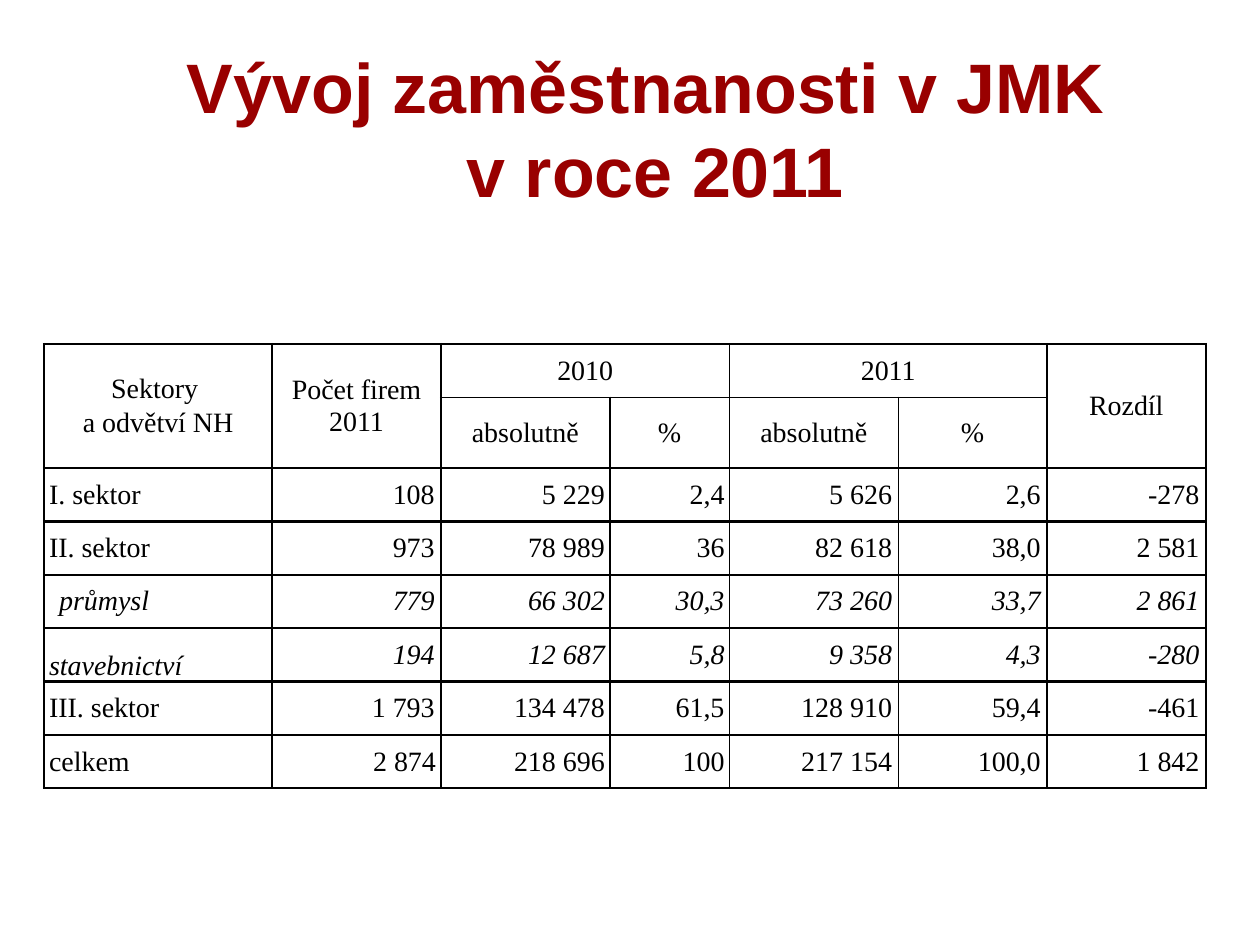
from dataclasses import dataclass

from lxml import etree
from pptx import Presentation
from pptx import util as u
from pptx.dml.color import RGBColor
from pptx.enum import text
from pptx.oxml.ns import qn

ALIGN = text.PP_ALIGN
ANCHOR = text.MSO_ANCHOR


@dataclass(frozen=True)
class Theme:
    """Colours, fonts, type sizes and line widths."""
    title: str = "990000"
    ink: str = "000000"
    paper: str = "FFFFFF"
    heading_font: str = "Arial"
    body_font: str = "Times New Roman"
    heading_size: int = 40
    body_size: int = 16
    heavy: float = 1.5
    light: float = 1


COLUMNS = [1.81, 1.34, 1.34, 0.95, 1.34, 1.18, 1.26]
HEADER = [
    ["Sektory \na odvětví NH", "Počet firem 2011", "2010", "", "2011", "", "Rozdíl"],
    ["", "", "absolutně", "%", "absolutně", "%", ""],
]
SECTORS = [
    ["I. sektor ", "108", "5 229", "2,4", "5 626", "2,6", "-278"],
    ["II. sektor", "973", "78 989", "36", "82 618", "38,0", "2 581"],
    ["průmysl", "779", "66 302", "30,3", "73 260", "33,7", "2 861"],
    ["stavebnictví", "194", "12 687", "5,8", "9 358", "4,3", "-280"],
    ["III. sektor", "1 793", "134 478", "61,5", "128 910", "59,4", "-461"],
    ["celkem", "2 874", "218 696", "100", "217 154", "100,0", "1 842"],
]
MERGES = [(0, 0, 1, 0), (0, 1, 1, 1), (0, 2, 0, 3), (0, 4, 0, 5), (0, 6, 1, 6)]
BRANCHES = ("průmysl", "stavebnictví")
HEAVY_COLUMN_LINES = {0, 1, 2, 7}
HEAVY_ROW_LINES = {0, 2, 3, 6, 8}
WIDE_INSET_COLUMNS = {1, 4, 5, 6}


class Deck:
    """Holds the style and the current slide."""

    def __init__(self, prs, theme):
        self.prs, self.theme = prs, theme
        self.slide = prs.slides.add_slide(prs.slide_layouts[6])

    def place(self, x, y, w, h):
        """Turn shares of the slide into lengths."""
        width, height = self.prs.slide_width, self.prs.slide_height
        return [u.Emu(round(n)) for n in (x * width, y * height, w * width, h * height)]

    def style(self, p, font, size, color, bold=False, italic=False):
        """Format every run of a paragraph."""
        for r in p.runs:
            r.font.name, r.font.size = font, u.Pt(size)
            r.font.bold, r.font.italic = bold, italic
            r.font.color.rgb = RGBColor.from_string(color)

    def title(self, words, *area):
        """Add the centred heading."""
        t = self.theme
        tf = self.slide.shapes.add_textbox(*self.place(*area)).text_frame
        tf.word_wrap = True
        tf.vertical_anchor = ANCHOR.MIDDLE
        tf.text = words
        p = tf.paragraphs[0]
        p.alignment = ALIGN.CENTER
        self.style(p, t.heading_font, t.heading_size, t.title, bold=True)

    def border(self, cell, side, width):
        """Draw one side of a cell."""
        ln = etree.SubElement(cell._tc.get_or_add_tcPr(), qn(f"a:ln{side}"), w=str(u.Pt(width)))
        fill = etree.SubElement(ln, qn("a:solidFill"))
        etree.SubElement(fill, qn("a:srgbClr"), val=self.theme.ink)

    def frame(self, cell, row, col):
        """Draw the four sides of a cell, with its span taken in."""
        t = self.theme
        lines = [("L", col, HEAVY_COLUMN_LINES),
                 ("R", col + cell.span_width, HEAVY_COLUMN_LINES),
                 ("T", row, HEAVY_ROW_LINES),
                 ("B", row + cell.span_height, HEAVY_ROW_LINES)]
        for side, index, heavy in lines:
            self.border(cell, side, t.heavy if index in heavy else t.light)

    def cell(self, cell, words, row, col, italic):
        """Fill and format one table cell."""
        t = self.theme
        is_header = row < len(HEADER)
        is_label = col == 0 and not is_header
        is_total = words == SECTORS[-1][1]
        wide = not is_header and col in WIDE_INSET_COLUMNS and not is_total
        cell.margin_left = cell.margin_right = u.Inches(0.05 if wide else 0.04)
        cell.margin_top = cell.margin_bottom = 0
        cell.vertical_anchor = ANCHOR.BOTTOM if words == BRANCHES[1] else ANCHOR.MIDDLE
        cell.text_frame.text = words
        for i, p in enumerate(cell.text_frame.paragraphs):
            p.alignment = ALIGN.CENTER if is_header else ALIGN.JUSTIFY if is_label else ALIGN.RIGHT
            if is_header or is_label:
                p.space_after = u.Pt(3 if words.strip() in ("I. sektor", "III. sektor") else 1)
            if i:
                p.space_before = u.Pt(1)
            if words == BRANCHES[0]:
                p._p.get_or_add_pPr().set("marL", str(u.Inches(0.08)))
            self.style(p, t.body_font, t.body_size, t.ink, italic=italic)
        self.frame(cell, row, col)
        if col == len(COLUMNS) - 1 and not is_header:
            cell.fill.solid()
            cell.fill.fore_color.rgb = RGBColor.from_string(t.paper)
        else:
            cell.fill.background()

    def table(self, rows, *area):
        """Add the ruled table."""
        x, y, w, h = self.place(*area)
        tbl = self.slide.shapes.add_table(len(rows), len(COLUMNS), x, y, w, h).table
        tbl.first_row = tbl.horz_banding = False
        for column, width in zip(tbl.columns, COLUMNS):
            column.width = u.Inches(width)
        for top, left, bottom, right in MERGES:
            tbl.cell(top, left).merge(tbl.cell(bottom, right))
        for row, values in enumerate(rows):
            for col, words in enumerate(values):
                cell = tbl.cell(row, col)
                if cell.is_spanned:
                    cell.fill.background()
                else:
                    self.cell(cell, words, row, col, values[0] in BRANCHES)


def main():
    """Build the employment slide."""
    prs = Presentation()
    prs.slide_width, prs.slide_height = u.Inches(10), u.Inches(7.5)
    deck = Deck(prs, Theme())
    deck.title("Vývoj zaměstnanosti v JMK \vv roce 2011", 0.06, 0.05, 0.92, 0.17)
    deck.table(HEADER + SECTORS, 0.035, 0.364, 0.92, 0.452)
    prs.save("out.pptx")


if __name__ == "__main__":
    main()
